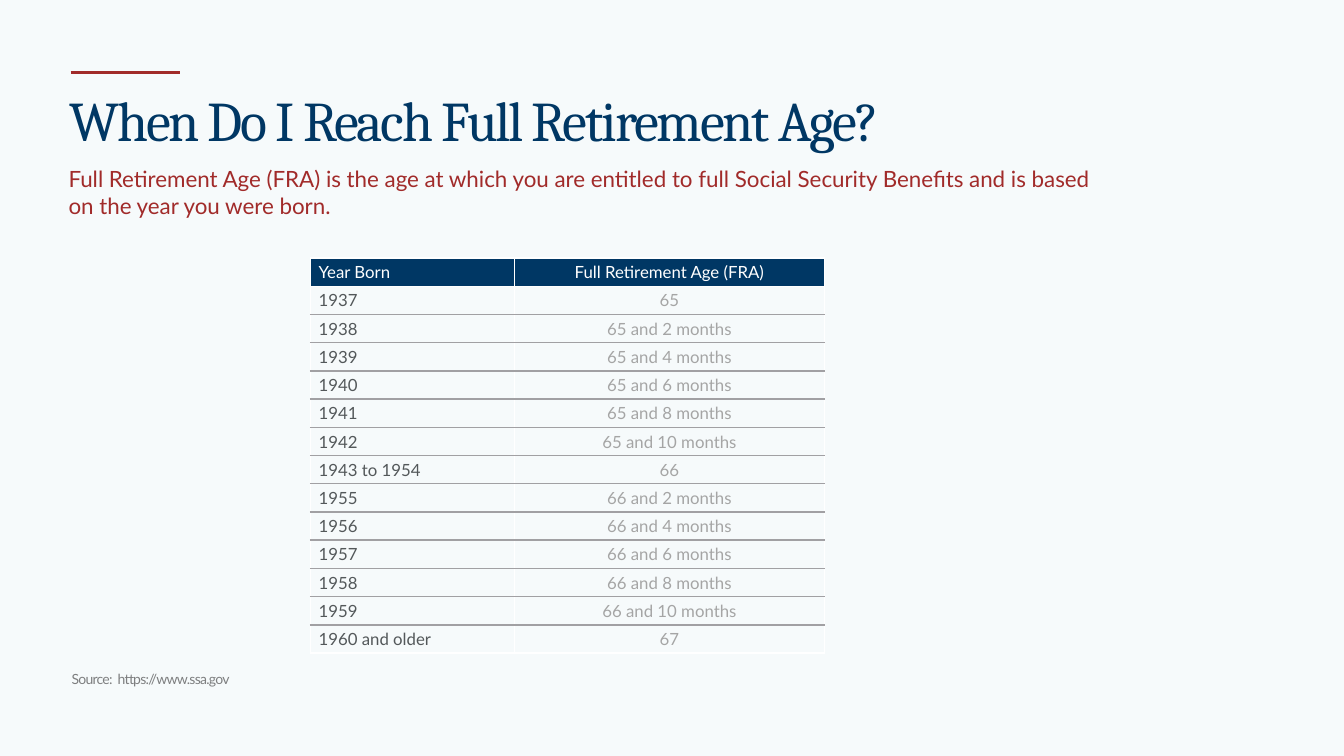
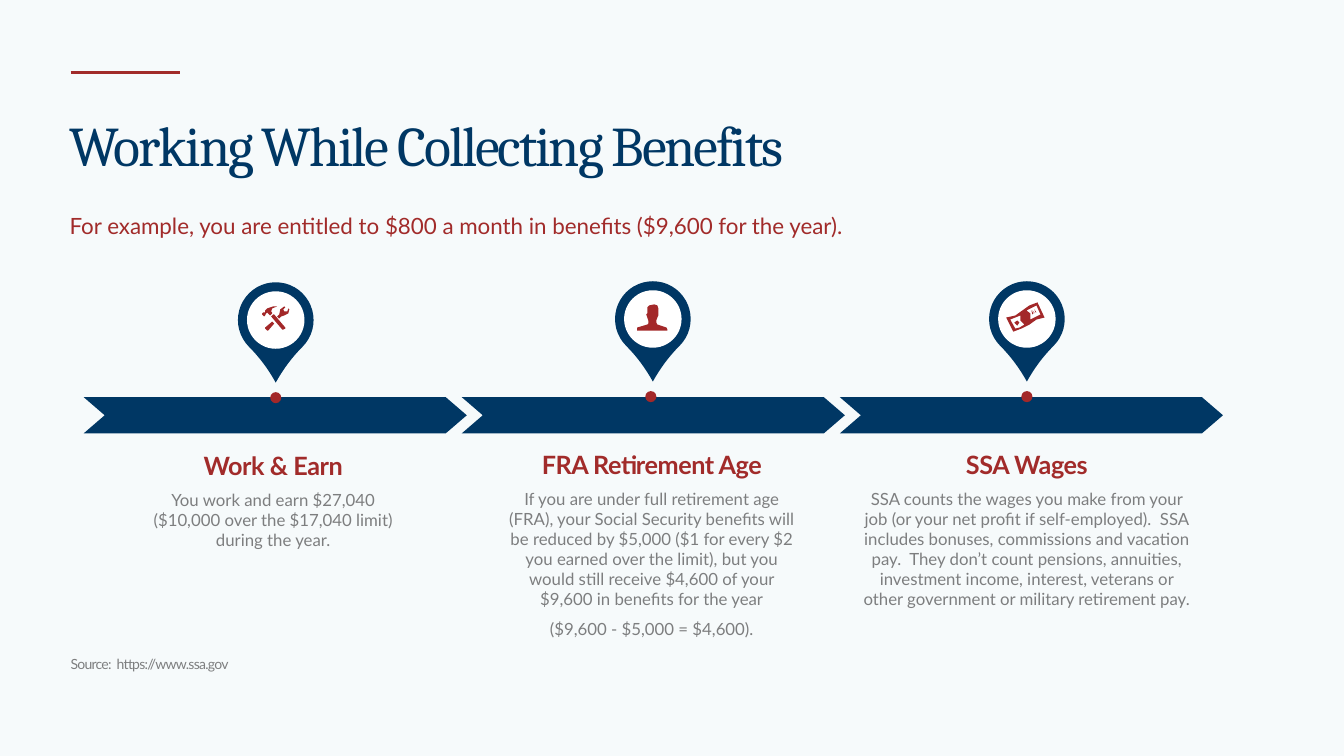
import pptx
import pptx.dml.color
import pptx.enum.shapes
import pptx.enum.text
import pptx.oxml.ns
import pptx.util
from lxml import etree

PX = 9144
SHAPE = pptx.enum.shapes.MSO_SHAPE
ALIGN = pptx.enum.text.PP_ALIGN


class Theme:
    back, white = "F6FAFB", "FFFFFF"
    navy, red, icon = "003764", "A12B2A", "A32829"
    gray, dark, pale, rule = "7D7E7F", "53585A", "A5A5A5", "A1A0A3"
    serif, sans = "Cambria", "Lato"
    title, lead, head, body, note = 40, 16, 18, 12, 10


SOURCE = "Source:  https://www.ssa.gov"

AGES = [
    ("Year Born", "Full Retirement Age (FRA)"),
    ("1937", "65"),
    ("1938", "65 and 2 months"),
    ("1939", "65 and 4 months"),
    ("1940", "65 and 6 months"),
    ("1941", "65 and 8 months"),
    ("1942", "65 and 10 months"),
    ("1943 to 1954", "66"),
    ("1955", "66 and 2 months"),
    ("1956", "66 and 4 months"),
    ("1957", "66 and 6 months"),
    ("1958", "66 and 8 months"),
    ("1959", "66 and 10 months"),
    ("1960 and older", "67"),
]

TOOLS = [
    [(28, 31), (29, 30), (32, 33), (34, 31), (34, 30), (33, 29), (34, 26), (39, 24), (35, 24),
     (29, 26), (27, 28), (27, 30), (25, 30), (24, 31), (24, 32), (26, 34), (27, 33)],
    [(36, 32), (35, 32), (33, 34), (44, 47), (45, 47), (47, 46), (47, 45)],
    [(51, 27), (50, 26), (49, 29), (46, 29), (45, 27), (47, 25), (46, 24), (42, 27),
     (41, 32), (39, 34), (41, 36), (43, 34), (46, 33), (50, 31)],
    [(27, 45), (27, 46), (29, 48), (30, 48), (36, 41), (34, 39)],
]
PERSON = [
    [(22, 49), (22, 46), (32, 43), (33, 42), (33, 39), (32, 36), (31, 33), (32, 32), (32, 26),
     (34, 24), (39, 23), (42, 24), (43, 27), (43, 34), (42, 36), (41, 39), (41, 41),
     (42, 43), (51, 46), (52, 48), (52, 49)],
]
MONEY = [
    [(48, 21), (55, 36), (47, 38), (40, 43), (32, 47), (24, 50), (17, 36), (26, 34),
     (33, 29), (40, 24)],
    [(26, 47), (30, 46), (35, 43), (31, 39), (31, 34), (21, 38)],
    [(25, 41), (28, 39), (30, 41), (28, 44)],
    [(47, 24), (37, 29), (41, 32), (41, 38), (51, 33)],
    [(42, 29), (43, 33), (44, 32)],
    [(43, 29), (45, 32), (45, 31)],
    [(45, 28), (46, 31), (47, 31)],
]

STEPS = [
    {"pin": (236, 280), "dot": (268, 389), "icon": TOOLS, "text": (144, 451, 254, 96),
     "head": "Work & Earn",
     "body": ["You work and earn $27,040 ($10,000 over the $17,040 limit) during the year."]},
    {"pin": (610, 279), "dot": (640, 388), "icon": PERSON, "text": (501, 450, 291, 186),
     "head": "FRA Retirement Age",
     "body": ["If you are under full retirement age (FRA), your Social Security benefits will be "
              "reduced by $5,000 ($1 for every $2 you earned over the limit), but you would still "
              "receive $4,600 of your $9,600 in benefits for the year",
              "($9,600 - $5,000 = $4,600)."]},
    {"pin": (981, 279), "dot": (1013, 388), "icon": MONEY, "text": (852, 450, 333, 156),
     "head": "SSA Wages",
     "body": ["SSA counts the wages you make from your job (or your net profit if self-employed).  "
              "SSA includes bonuses, commissions and vacation pay.  They don’t count pensions, "
              "annuities, investment income, interest, veterans or other government or military "
              "retirement pay."]},
]


def rgb(code):
    return pptx.dml.color.RGBColor.from_string(code)


def emu(*nums):
    return [pptx.util.Emu(round(num * PX)) for num in nums]


def style(para, size, color, font=Theme.sans, bold=False, space=0, align=ALIGN.LEFT):
    para.alignment = align
    for run in para.runs:
        run.font.size = pptx.util.Pt(size)
        run.font.name = font
        run.font.bold = bold
        run.font.color.rgb = rgb(color)
        if space:
            run._r.get_or_add_rPr().set("spc", str(round(space * 100)))


def add_text(slide, box, lines, wrap=True):
    frame = slide.shapes.add_textbox(*emu(*box)).text_frame
    frame.word_wrap = wrap
    frame.margin_left = frame.margin_right = frame.margin_top = frame.margin_bottom = 0
    frame.text = "\n".join(text for text, look in lines)
    for para, (text, look) in zip(frame.paragraphs, lines):
        style(para, **look)
    return frame


def paint(shape, color):
    shape.shadow.inherit = False
    shape.fill.solid()
    shape.fill.fore_color.rgb = rgb(color)
    shape.line.fill.background()


def add_form(slide, kind, box, color, turn=0, adjust=None):
    shape = slide.shapes.add_shape(kind, *emu(*box))
    paint(shape, color)
    shape.rotation = turn
    if adjust:
        shape.adjustments[0] = adjust


def add_icon(slide, left, top, rings):
    rings = [[(left + x, top + y) for x, y in ring] for ring in rings]
    pen = slide.shapes.build_freeform(*rings[0][0], scale=PX)
    for num, ring in enumerate(rings):
        if num:
            pen.move_to(*ring[0])
        pen.add_line_segments(ring[1:], close=True)
    paint(pen.convert_to_shape(), Theme.icon)


def add_base(deck, title, title_top, lead, lead_box, note_at):
    slide = deck.slides.add_slide(deck.slide_layouts[6])
    slide.background.fill.solid()
    slide.background.fill.fore_color.rgb = rgb(Theme.back)
    line = slide.shapes.add_connector(
        pptx.enum.shapes.MSO_CONNECTOR.STRAIGHT, *emu(70, 72, 179, 72))
    line.line.color.rgb = rgb(Theme.red)
    line.line.width = pptx.util.Pt(2.25)
    etree.SubElement(line._element.spPr, pptx.oxml.ns.qn("a:effectLst"))
    add_text(slide, (69, title_top, 1210, 67),
             [(title, dict(size=Theme.title, color=Theme.navy, font=Theme.serif, space=-1.5))])
    add_text(slide, lead_box, [(lead, dict(size=Theme.lead, color=Theme.red))])
    add_text(slide, (*note_at, 166, 17),
             [(SOURCE, dict(size=Theme.note, color=Theme.gray, space=-0.5))], wrap=False)
    return slide


def set_edge(cell, side, color, width):
    name = pptx.oxml.ns.qn
    edge = etree.SubElement(cell._tc.get_or_add_tcPr(), name("a:ln" + side),
                            w=str(pptx.util.Pt(width)))
    fill = etree.SubElement(edge, name("a:solidFill"))
    etree.SubElement(fill, name("a:srgbClr"), val=color)


def add_ages(slide):
    high = 28
    table = slide.shapes.add_table(
        len(AGES), 2, *emu(308, 256, 510, high * len(AGES))).table
    table.first_row = table.horz_banding = False
    for col, width in zip(table.columns, (202, 308)):
        col.width = emu(width)[0]
    white, rule = (Theme.white, 1), (Theme.rule, 1.19)
    last = len(AGES) - 1
    for row, texts in enumerate(AGES):
        table.rows[row].height = emu(high)[0]
        for col, text in enumerate(texts):
            cell = table.cell(row, col)
            cell.text_frame.text = text
            cell.vertical_anchor = pptx.enum.text.MSO_ANCHOR.MIDDLE
            cell.margin_left, cell.margin_right = emu(8, 8)
            cell.margin_top, cell.margin_bottom = emu(4, 4)
            color = Theme.white if row == 0 else (Theme.dark, Theme.pale)[col]
            style(cell.text_frame.paragraphs[0], Theme.body, color,
                  align=(ALIGN.LEFT, ALIGN.CENTER)[col])
            set_edge(cell, "L", *white)
            set_edge(cell, "R", *white)
            set_edge(cell, "T", *(white if row < 2 else rule))
            set_edge(cell, "B", *(white if row in (0, last) else rule))
            if row:
                cell.fill.background()
            else:
                cell.fill.solid()
                cell.fill.fore_color.rgb = rgb(Theme.navy)


def add_step(slide, num, step):
    left, top = step["pin"]
    add_form(slide, SHAPE.CHEVRON, (83 + 375 * num, 394, 380, 36), Theme.navy, adjust=0.58)
    add_form(slide, SHAPE.TEAR, (left, top, 75, 75), Theme.navy, 135, 1.17)
    add_form(slide, SHAPE.OVAL, (left + 9, top + 9, 57, 57), Theme.white)
    add_form(slide, SHAPE.OVAL, (*step["dot"], 11, 11), Theme.icon)
    add_icon(slide, left, top, step["icon"])
    head = dict(size=Theme.head, color=Theme.red, bold=True, space=-0.3, align=ALIGN.CENTER)
    body = dict(size=Theme.body, color=Theme.gray, align=ALIGN.CENTER)
    frame = add_text(slide, step["text"],
                     [(step["head"], head)] + [(text, body) for text in step["body"]])
    frame.paragraphs[0].line_spacing = pptx.util.Pt(18.4)
    for para in frame.paragraphs:
        para.space_after = pptx.util.Pt(6.5)


def main():
    deck = pptx.Presentation()
    deck.slide_width, deck.slide_height = emu(1333, 750)
    ages = add_base(
        deck, "When Do I Reach Full Retirement Age?", 85,
        "Full Retirement Age (FRA) is the age at which you are entitled to full Social Security "
        "Benefits and is based on the year you were born.", (68, 164, 1023, 37), (71, 665))
    add_ages(ages)
    work = add_base(
        deck, "Working While Collecting Benefits", 110,
        "For example, you are entitled to $800 a month in benefits ($9,600 for the year).",
        (69, 210, 881, 37), (70, 650))
    for num, step in enumerate(STEPS):
        add_step(work, num, step)
    deck.save("out.pptx")


if __name__ == "__main__":
    main()
